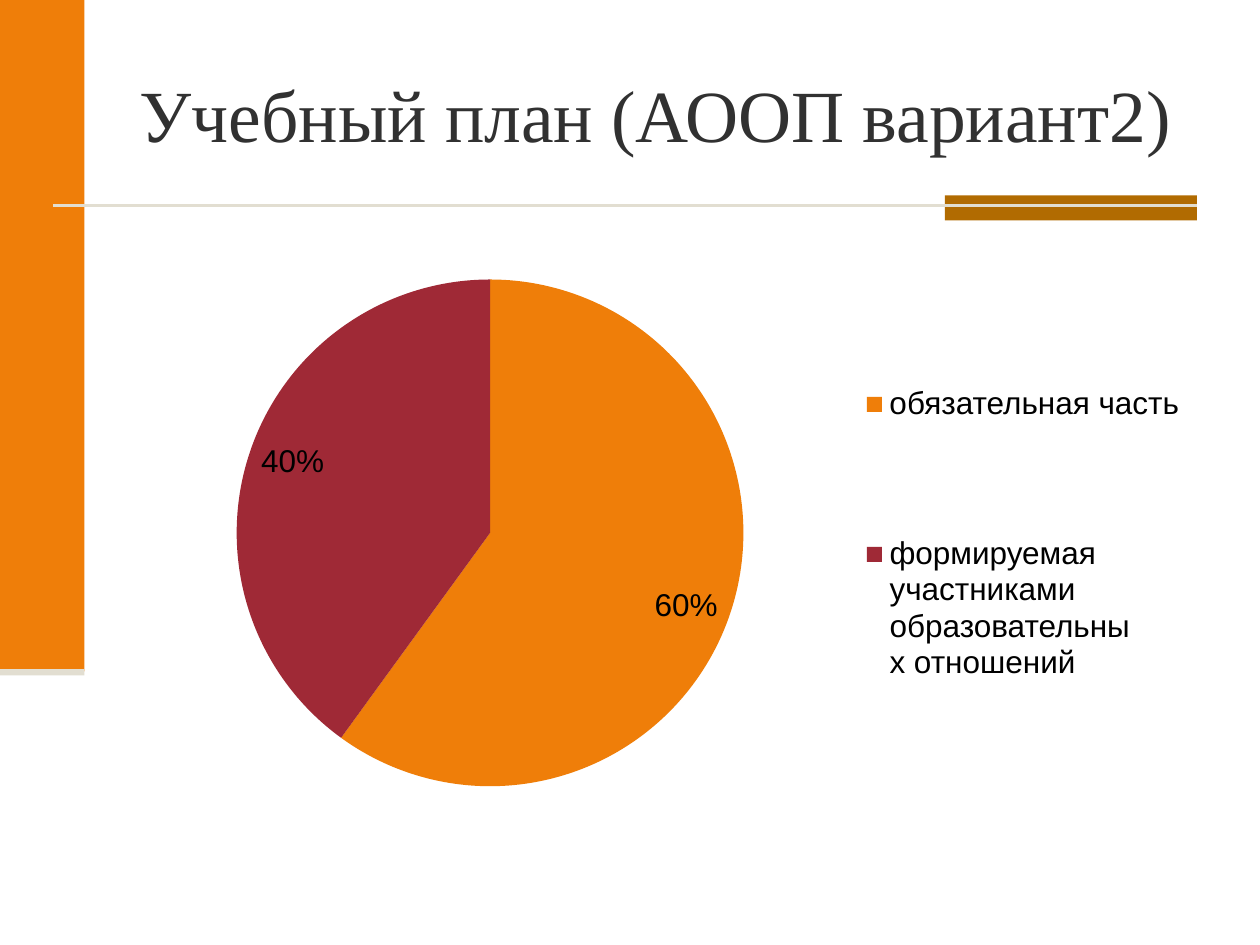
import pptx
import pptx.chart.data
import pptx.dml.color
import pptx.enum.chart
import pptx.enum.shapes
import pptx.enum.text
import pptx.util
from lxml import etree
from pptx.oxml.ns import qn

TITLE = "Учебный план (АООП вариант2)"
COLORS = {"orange": "EF7E09", "brown": "B16B01", "sand": "E2DED1",
          "red": "9F2936", "title": "313131", "text": "000000"}
# Plan part, share, colour, swatch top, text top, text width, label shift in inches
PARTS = [
    ("обязательная часть", 0.6, "orange", 3.15, 3.06, 2.4, (-0.05, 0.11)),
    ("формируемая участниками образовательных отношений", 0.4, "red",
     4.34, 4.25, 1.98, (0.04, -0.1)),
]
# Decoration: left, top, width, height, colour
BARS = [
    (0, 0, 0.67, 5.33, "orange"),
    (7.5, 1.55, 2, 0.2, "brown"),
    (0, 5.31, 0.67, 0.05, "sand"),
]
RULE = (0.42, 1.63, 9.5)
PIE_CENTER, PIE_RADIUS, PIE_MARGIN = (3.89, 4.23), 2.01, 0.2
SWATCH_LEFT, SWATCH_SIZE, LEGEND_LEFT = 6.88, 0.12, 7.06

inch = pptx.util.Inches


def color(name):
    return pptx.dml.color.RGBColor.from_string(COLORS[name])


def style(font, face, size, name):
    font.name, font.size = face, pptx.util.Pt(size)
    font.color.rgb = color(name)


def place(shape, *box):
    shape.left, shape.top, shape.width, shape.height = map(inch, box)


def add_bar(left, top, width, height, name):
    bar = slide.shapes.add_shape(pptx.enum.shapes.MSO_SHAPE.RECTANGLE,
                                 *map(inch, (left, top, width, height)))
    bar.shadow.inherit = False
    bar.fill.solid()
    bar.fill.fore_color.rgb = color(name)
    bar.line.fill.background()


def write(frame, text, face, size, name):
    frame.word_wrap = True
    frame.margin_left = frame.margin_right = frame.margin_top = frame.margin_bottom = 0
    frame.vertical_anchor = pptx.enum.text.MSO_ANCHOR.TOP
    paragraph = frame.paragraphs[0]
    paragraph.alignment = pptx.enum.text.PP_ALIGN.LEFT
    run = paragraph.add_run()
    run.text = text
    style(run.font, face, size, name)
    return paragraph


def add_layout(parent, position, values):
    layout = etree.Element(qn("c:layout"))
    parent.insert(position, layout)
    manual = etree.SubElement(layout, qn("c:manualLayout"))
    for tag, value in values:
        etree.SubElement(manual, qn("c:" + tag)).set("val", str(value))


deck = pptx.Presentation()
deck.slide_width, deck.slide_height = inch(10), inch(7.5)
slide = deck.slides.add_slide(deck.slide_layouts[5])

# Decoration
for bar_row in BARS:
    add_bar(*bar_row)
left, level, right = RULE
rule = slide.shapes.add_connector(pptx.enum.shapes.MSO_CONNECTOR.STRAIGHT,
                                  *map(inch, (left, level, right, level)))
rule.line.color.rgb = color("sand")
rule.line.width = pptx.util.Pt(1.5)
etree.SubElement(rule._element.spPr, qn("a:effectLst"))

# Title
title = slide.shapes.title
place(title, 1.11, 0.55, 8.4, 0.71)
write(title.text_frame, TITLE, "Times New Roman", 42, "title")

# Pie of the plan parts
shares = pptx.chart.data.CategoryChartData(number_format="0%")
shares.categories = [part[0] for part in PARTS]
shares.add_series("Учебный план", [part[1] for part in PARTS])
half = PIE_RADIUS + PIE_MARGIN
pie = slide.shapes.add_chart(
    pptx.enum.chart.XL_CHART_TYPE.PIE,
    *(inch(center - half) for center in PIE_CENTER),
    inch(2 * half), inch(2 * half), shares).chart
pie.has_legend = pie.has_title = False
style(pie.font, "Arial", 18, "text")

plot = pie.plots[0]
plot.vary_by_categories = True
series = plot.series[0]
labels = series.data_labels
labels.show_value = True
labels.number_format, labels.number_format_is_linked = "0%", False
labels.position = pptx.enum.chart.XL_LABEL_POSITION.INSIDE_END
style(labels.font, "Arial", 18, "text")
for index, part in enumerate(PARTS):
    point = series.points[index]
    point.format.fill.solid()
    point.format.fill.fore_color.rgb = color(part[2])
    point.format.line.fill.background()
    style(point.data_label.font, "Arial", 18, "text")
    point.data_label.position = pptx.enum.chart.XL_LABEL_POSITION.INSIDE_END
    label = labels._element.findall(qn("c:dLbl"))[index]
    shift_x, shift_y = (round(shift / (2 * half), 3) for shift in part[6])
    add_layout(label, 1, [("x", shift_x), ("y", shift_y)])

# Plot area fixed inside the chart frame
plot_area = pie._chartSpace.chart.plotArea
for layout in plot_area.findall(qn("c:layout")):
    plot_area.remove(layout)
inset = round(PIE_MARGIN / (2 * half), 3)
add_layout(plot_area, 0, [
    ("layoutTarget", "inner"), ("xMode", "edge"), ("yMode", "edge"),
    ("x", inset), ("y", inset), ("w", 1 - 2 * inset), ("h", 1 - 2 * inset)])

# Legend
for text, share, name, swatch_top, text_top, width, shift in PARTS:
    add_bar(SWATCH_LEFT, swatch_top, SWATCH_SIZE, SWATCH_SIZE, name)
    entry = slide.shapes.add_textbox(*map(inch, (LEGEND_LEFT, text_top, width, 0.31)))
    paragraph = write(entry.text_frame, text, "Arial", 18, "text")
    paragraph.line_spacing = 0.96

deck.save("out.pptx")
